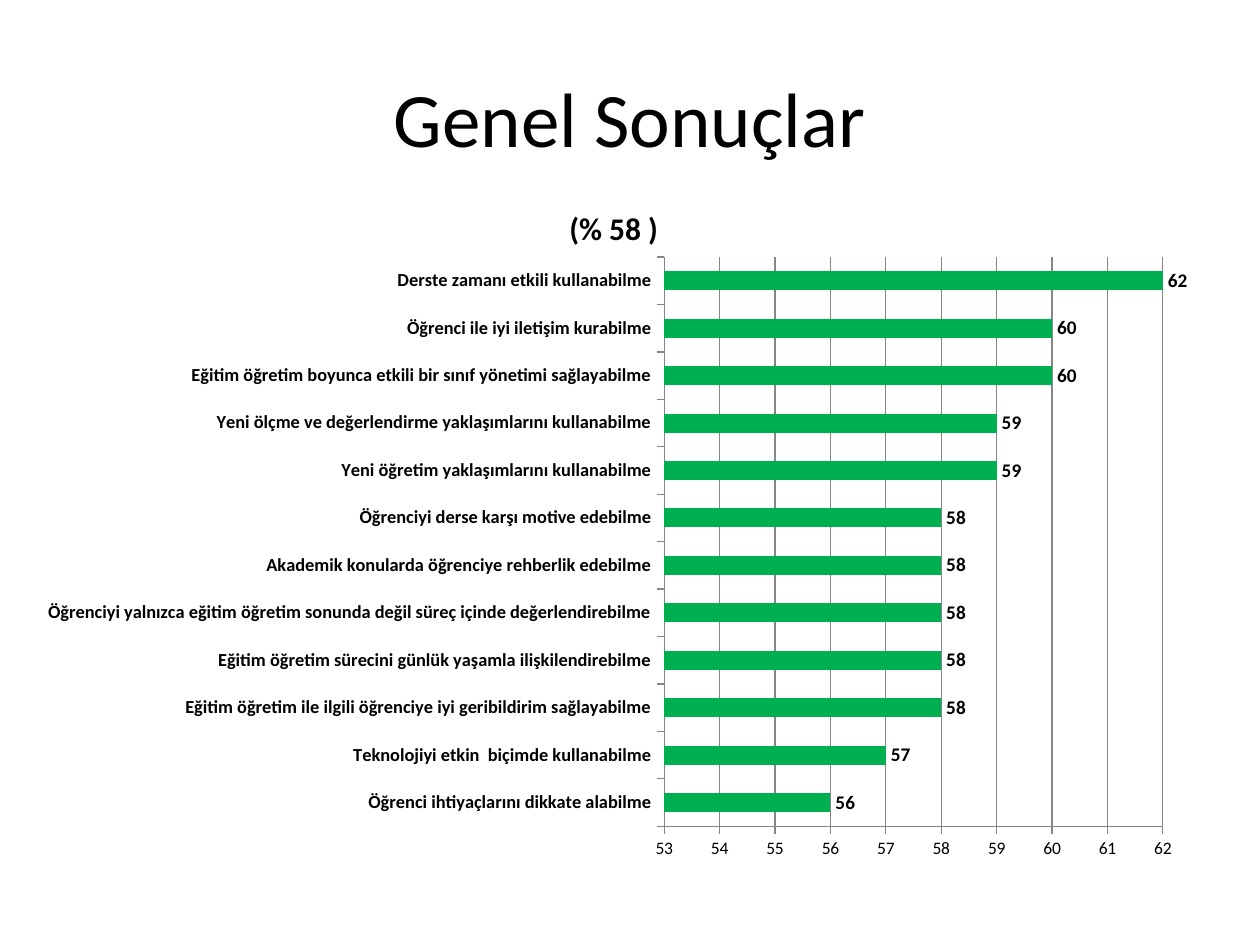
from lxml.etree import SubElement
from pptx import Presentation
from pptx.chart.data import CategoryChartData
from pptx.dml.color import RGBColor
from pptx.enum.chart import XL_CHART_TYPE, XL_LABEL_POSITION, XL_TICK_MARK
from pptx.enum.text import MSO_ANCHOR, PP_ALIGN
from pptx.oxml.ns import qn
from pptx.util import Inches, Pt

COLORS = {"text": "000000", "bar": "00B050", "line": "868686"}
RESULTS = {
    "Öğrenci ihtiyaçlarını dikkate alabilme": 56,
    "Teknolojiyi etkin  biçimde kullanabilme": 57,
    "Eğitim öğretim ile ilgili öğrenciye iyi geribildirim sağlayabilme": 58,
    "Eğitim öğretim sürecini günlük yaşamla ilişkilendirebilme": 58,
    "Öğrenciyi yalnızca eğitim öğretim sonunda değil süreç içinde değerlendirebilme": 58,
    "Akademik konularda öğrenciye rehberlik edebilme": 58,
    "Öğrenciyi derse karşı motive edebilme": 58,
    "Yeni öğretim yaklaşımlarını kullanabilme": 59,
    "Yeni ölçme ve değerlendirme yaklaşımlarını kullanabilme": 59,
    "Eğitim öğretim boyunca etkili bir sınıf yönetimi sağlayabilme": 60,
    "Öğrenci ile iyi iletişim kurabilme": 60,
    "Derste zamanı etkili kullanabilme": 62,
}


def style_font(font, size, bold=False):
    settings = {"name": "Calibri", "size": Pt(size), "bold": bold}
    for attribute, value in settings.items():
        setattr(font, attribute, value)
    font.color.rgb = RGBColor.from_string(COLORS["text"])


def set_layout(parent, index, settings):
    """Place a chart part by fractions of the chart area."""
    for old in parent.findall(qn("c:layout")):
        parent.remove(old)
    layout = SubElement(parent, qn("c:layout"))
    parent.insert(index, layout)
    manual = SubElement(layout, qn("c:manualLayout"))
    for tag, value in settings.items():
        SubElement(manual, qn(f"c:{tag}")).set("val", str(value))


prs = Presentation()
prs.slide_width, prs.slide_height = Inches(10), Inches(7.5)
slide = prs.slides.add_slide(prs.slide_layouts[5])

# Title
heading = slide.shapes.title
heading.left, heading.top = Inches(0.5), Inches(0.3)
heading.width, heading.height = Inches(9), Inches(1.25)
heading.text_frame.text = "Genel Sonuçlar"
heading.text_frame.vertical_anchor = MSO_ANCHOR.MIDDLE
heading_line = heading.text_frame.paragraphs[0]
heading_line.alignment = PP_ALIGN.CENTER
style_font(heading_line.runs[0].font, 44)

# Bar chart of the results
results_data = CategoryChartData(number_format="0")
results_data.categories = list(RESULTS)
results_data.add_series("Series 1", list(RESULTS.values()))
chart = slide.shapes.add_chart(
    XL_CHART_TYPE.BAR_CLUSTERED, Inches(0.2), Inches(1.31),
    Inches(9.29), Inches(5.62), results_data).chart
chart.has_legend = False
style_font(chart.font, 10)

# Overall score above the bars
chart.has_title = True
overall = chart.chart_title.text_frame
overall.text = "(% 58 )"
style_font(overall.paragraphs[0].runs[0].font, 18, True)
set_layout(chart.chart_title._element, 1,
           {"xMode": "edge", "yMode": "edge", "x": 0.46, "y": 0.05})
set_layout(chart._chartSpace.chart.plotArea, 0,
           {"layoutTarget": "inner", "xMode": "edge", "yMode": "edge",
            "x": 0.546, "y": 0.13, "w": 0.426, "h": 0.804})

# Axes and gridlines
criteria, score = chart.category_axis, chart.value_axis
scale = {"minimum_scale": 53, "maximum_scale": 62, "major_unit": 1,
         "has_major_gridlines": True}
for attribute, value in scale.items():
    setattr(score, attribute, value)
score.tick_labels.number_format = "0"
score.tick_labels.number_format_is_linked = False
style_font(criteria.tick_labels.font, 10.5, True)
style_font(score.tick_labels.font, 10)
for axis in (criteria, score):
    axis.major_tick_mark = XL_TICK_MARK.OUTSIDE
    axis.minor_tick_mark = XL_TICK_MARK.NONE
for ruled in (criteria, score, score.major_gridlines):
    ruled.format.line.color.rgb = RGBColor.from_string(COLORS["line"])
    ruled.format.line.width = Pt(0.75)

# Bars and their values
plot = chart.plots[0]
plot.gap_width = 150
plot.vary_by_categories = False
bars = plot.series[0]
bars.format.fill.solid()
bars.format.fill.fore_color.rgb = RGBColor.from_string(COLORS["bar"])
labels = bars.data_labels
label_settings = {"show_value": True, "number_format": "0",
                  "number_format_is_linked": False,
                  "position": XL_LABEL_POSITION.OUTSIDE_END}
for attribute, value in label_settings.items():
    setattr(labels, attribute, value)
style_font(labels.font, 11, True)

prs.save("out.pptx")
